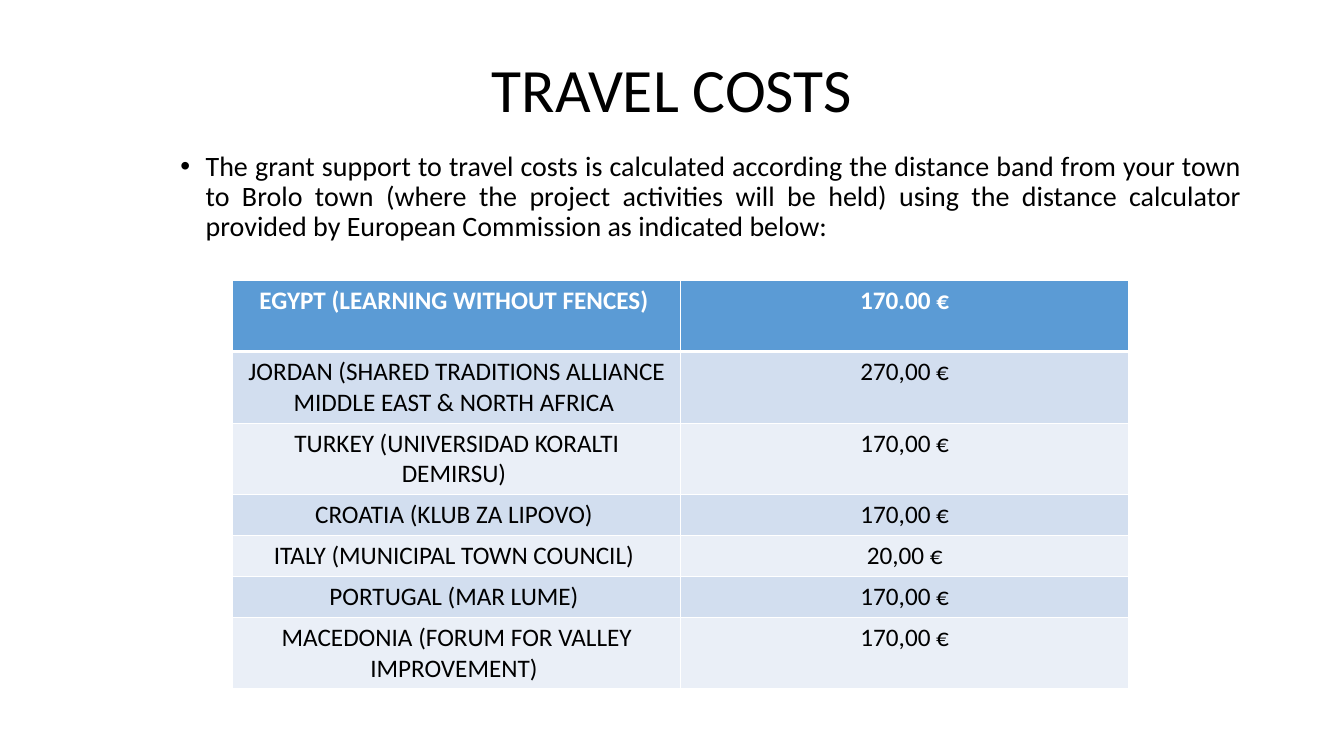
from lxml.etree import SubElement
from pptx import Presentation
from pptx.dml.color import RGBColor
from pptx.enum.text import MSO_ANCHOR, MSO_AUTO_SIZE, PP_ALIGN
from pptx.oxml.ns import qn
from pptx.util import Pt

TITLE = "TRAVEL COSTS"
INTRO = (
    "The grant support to travel costs is calculated according the distance band "
    "from your town to Brolo town (where the project activities will be held) using "
    "the distance calculator provided by European Commission as indicated below:"
)
TALL, SHORT = 50.8, 29.2
COSTS = [
    ("EGYPT (LEARNING WITHOUT FENCES) ", "170.00 €", TALL),
    ("JORDAN (SHARED TRADITIONS ALLIANCE MIDDLE EAST & NORTH AFRICA ", "270,00 €", TALL),
    ("TURKEY (UNIVERSIDAD KORALTI DEMIRSU) ", "170,00 €", TALL),
    ("CROATIA (KLUB ZA LIPOVO) ", "170,00 €", SHORT),
    ("ITALY (MUNICIPAL TOWN COUNCIL) ", "20,00 €", SHORT),
    ("PORTUGAL (MAR LUME) ", "170,00 €", SHORT),
    ("MACEDONIA (FORUM FOR VALLEY IMPROVEMENT) ", "170,00 €", TALL),
]
HEADER_FILL, BAND_FILLS = "5B9BD5", ("EAEFF7", "D2DEEF")
WHITE, BLACK = "FFFFFF", "000000"


def rgb(value):
    """Return the colour for a hex string."""
    return RGBColor.from_string(value)


def set_attrs(obj, values):
    """Set each attribute of an object from a dict."""
    for name, value in values.items():
        setattr(obj, name, value)


def write_text(tf, text, font, color, para):
    """Write one formatted paragraph into a text frame and return it."""
    p = tf.paragraphs[0]
    set_attrs(p, para)
    r = p.add_run()
    r.text = text
    set_attrs(r.font, {"name": "Calibri", **font})
    r.font.color.rgb = rgb(color)
    return p


def fill_placeholder(sp, box, text, size, anchor, para):
    """Place a placeholder and write its text."""
    set_attrs(sp, dict(zip(("left", "top", "width", "height"), map(Pt, box))))
    tf = sp.text_frame
    set_attrs(tf, {"word_wrap": True, "auto_size": MSO_AUTO_SIZE.NONE,
                   "vertical_anchor": anchor})
    return write_text(tf, text, {"size": Pt(size)}, BLACK,
                      {"line_spacing": 0.9, **para})


def set_bullet(p, indent):
    """Give a paragraph a round bullet with a hanging indent."""
    pPr = p._p.get_or_add_pPr()
    pPr.set("marL", str(Pt(indent)))
    pPr.set("indent", str(-Pt(indent)))
    SubElement(pPr, qn("a:buFont"), typeface="Arial")
    SubElement(pPr, qn("a:buChar"), char="•")


def set_borders(cell, widths):
    """Draw white borders of the given widths around a cell."""
    tcPr = cell._tc.get_or_add_tcPr()
    for side, width in widths.items():
        ln = SubElement(tcPr, qn(f"a:ln{side}"), w=str(Pt(width)))
        fill = SubElement(ln, qn("a:solidFill"))
        SubElement(fill, qn("a:srgbClr"), val=WHITE)


def add_cost_table(slide, left, top, width):
    """Add the table of travel costs by country."""
    height = sum(row[-1] for row in COSTS)
    table = slide.shapes.add_table(
        len(COSTS), 2, Pt(left), Pt(top), Pt(width), Pt(height)).table
    for i, (partner, cost, row_height) in enumerate(COSTS):
        table.rows[i].height = Pt(row_height)
        header = i == 0
        for j, text in enumerate((partner, cost)):
            cell = table.cell(i, j)
            set_borders(cell, {"L": 1, "R": 1, "T": 3 if i == 1 else 1,
                               "B": 3 if header else 1})
            cell.fill.solid()
            cell.fill.fore_color.rgb = rgb(HEADER_FILL if header else BAND_FILLS[i % 2])
            write_text(cell.text_frame, text, {"size": Pt(18), "bold": header},
                       WHITE if header else BLACK, {"alignment": PP_ALIGN.CENTER})


def main():
    """Build and save the travel costs slide."""
    prs = Presentation()
    set_attrs(prs, {"slide_width": Pt(960), "slide_height": Pt(540)})
    slide = prs.slides.add_slide(prs.slide_layouts[1])
    title, body = slide.placeholders
    fill_placeholder(title, (66, 28.75, 828, 74.4), TITLE, 44, MSO_ANCHOR.MIDDLE,
                     {"alignment": PP_ALIGN.CENTER})
    p = fill_placeholder(body, (121.7, 105.1, 772.3, 381.6), INTRO, 20, MSO_ANCHOR.TOP,
                         {"alignment": PP_ALIGN.JUSTIFY, "space_before": Pt(10)})
    set_bullet(p, 18)
    add_cost_table(slide, 166.3, 200.3, 640)
    prs.save("out.pptx")


if __name__ == "__main__":
    main()
